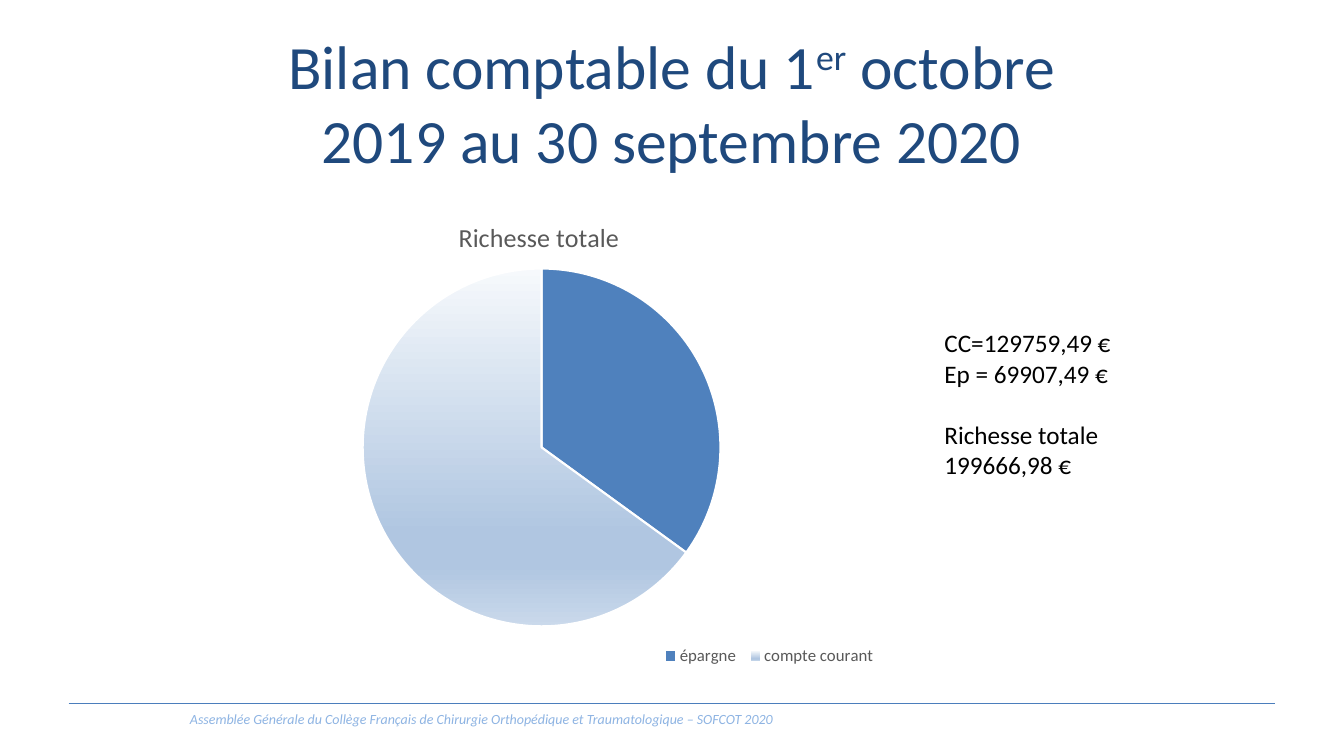
import pptx
import pptx.chart.data
import pptx.dml.color
import pptx.enum.chart
import pptx.enum.shapes
import pptx.enum.text
import pptx.oxml
import pptx.oxml.ns
import pptx.util

Cm, Pt = pptx.util.Cm, pptx.util.Pt
RGBColor = pptx.dml.color.RGBColor
qn = pptx.oxml.ns.qn
CENTER = pptx.enum.text.PP_ALIGN.CENTER

NAVY = RGBColor(0x1F, 0x49, 0x7D)
BLUE = RGBColor(0x4F, 0x81, 0xBD)
LINE_BLUE = RGBColor(0x4B, 0x7E, 0xBC)
PALE_BLUE = RGBColor(0x8E, 0xB4, 0xE3)
GREY = RGBColor(0x59, 0x59, 0x59)
BLACK = RGBColor(0, 0, 0)
WHITE = RGBColor(0xFF, 0xFF, 0xFF)
GRADIENT = [(0, "F6F9FC"), (74, "B0C6E1"), (83, "B0C6E1"), (100, "CAD9EB")]


def xml(tag, content):
    return pptx.oxml.parse_xml(
        f"<{tag} {pptx.oxml.ns.nsdecls('a', 'c')}>{content}</{tag}>")


def set_layout(parent, inner=False, **fractions):
    """Place a chart part by fractions of the chart's size."""
    for old in parent.findall(qn("c:layout")):
        parent.remove(old)
    target = '<c:layoutTarget val="inner"/>' if inner else ""
    modes = '<c:xMode val="edge"/><c:yMode val="edge"/>'
    sizes = "".join(f'<c:{k} val="{v}"/>' for k, v in fractions.items())
    layout = xml("c:layout", f"<c:manualLayout>{target}{modes}{sizes}</c:manualLayout>")
    overlay = parent.find(qn("c:overlay"))
    if overlay is None:
        parent.insert(0, layout)
    else:
        overlay.addprevious(layout)


class Deck:
    font_name = "Calibri"

    def __init__(self):
        self.prs = pptx.Presentation()
        self.prs.slide_width, self.prs.slide_height = Cm(33.87), Cm(19.05)
        self.s = self.prs.slides.add_slide(self.prs.slide_layouts[5])

    def style(self, font, size, color, italic=False):
        font.name, font.size, font.italic = self.font_name, Pt(size), italic
        font.bold = False
        font.color.rgb = color

    def title(self, box, runs, size, color):
        sp = self.s.shapes.title
        sp.left, sp.top, sp.width, sp.height = map(Cm, box)
        tf = sp.text_frame
        tf.word_wrap = True
        tf.auto_size = pptx.enum.text.MSO_AUTO_SIZE.NONE
        tf.vertical_anchor = pptx.enum.text.MSO_ANCHOR.MIDDLE
        p = tf.paragraphs[0]
        p.alignment = CENTER
        self.style(p.font, size, color)
        for text, baseline in runs:
            r = p.add_run()
            r.text = text
            if baseline:
                r.font._element.set("baseline", str(baseline * 1000))

    def text(self, box, lines, size, color, align=None, italic=False):
        """Each line is its text and the space before it in points."""
        tf = self.s.shapes.add_textbox(*map(Cm, box)).text_frame
        tf.word_wrap = True
        for i, (line, space) in enumerate(lines):
            p = tf.add_paragraph() if i else tf.paragraphs[0]
            p.text = line
            p.alignment = align
            if space:
                p.space_before = Pt(space)
            self.style(p.font, size, color, italic)

    def line(self, x1, y1, x2, y2, color, width):
        cn = self.s.shapes.add_connector(
            pptx.enum.shapes.MSO_CONNECTOR.STRAIGHT, Cm(x1), Cm(y1), Cm(x2), Cm(y2))
        cn.line.color.rgb, cn.line.width = color, Pt(width)
        cn._element.spPr.append(xml("a:effectLst", ""))

    def pie(self, box, title, values):
        data = pptx.chart.data.CategoryChartData()
        data.categories = list(values)
        data.add_series("Series 1", list(values.values()))
        chart = self.s.shapes.add_chart(
            pptx.enum.chart.XL_CHART_TYPE.PIE, *map(Cm, box), data).chart
        self.style(chart.font, 10, BLACK)

        # Chart title
        chart.has_title = True
        p = chart.chart_title.text_frame.paragraphs[0]
        p.text = title
        self.style(p.font, 18.6, GREY)
        set_layout(chart.chart_title._element, x=0.38, y=0.05)

        # Legend
        chart.has_legend = True
        legend = chart.legend
        legend.position = pptx.enum.chart.XL_LEGEND_POSITION.BOTTOM
        legend.include_in_layout = False
        self.style(legend.font, 12, GREY)
        set_layout(legend._element, x=0.67, y=0.93, w=0.32, h=0.06)

        # Slices
        plot = chart.plots[0]
        plot.vary_by_categories = True
        set_layout(chart._chartSpace.chart.plotArea, inner=True,
                   x=0.25, y=0.16, w=0.51, h=0.74)
        savings, current = (plot.series[0].points[i].format for i in range(2))
        savings.fill.solid()
        savings.fill.fore_color.rgb = BLUE
        current.fill.gradient()
        current.fill.gradient_angle = 270
        stops = chart._chartSpace.find(".//" + qn("a:gsLst"))
        stops[:] = [xml("a:gs", f'<a:srgbClr val="{color}"/>') for _, color in GRADIENT]
        for stop, (position, _) in zip(stops, GRADIENT):
            stop.set("pos", str(position * 1000))
        for piece in (savings, current):
            piece.line.color.rgb, piece.line.width = WHITE, Pt(1.5)


def main():
    deck = Deck()

    # Footer
    deck.line(1.73, 17.73, 32.13, 17.73, LINE_BLUE, 0.75)
    deck.text((1.73, 17.78, 20.8, 0.69),
              [("Assemblée Générale du Collège Français de Chirurgie "
                "Orthopédique et Traumatologique – SOFCOT 2020", 0)],
              10, PALE_BLUE, CENTER, italic=True)

    # Title
    deck.title((6.73, 0.56, 20.4, 4.01),
               [("Bilan comptable du 1", 0), ("er", 30),
                (" octobre 2019 au 30 septembre 2020", 0)], 44, NAVY)

    # Total wealth: chart and amounts
    deck.pie((4.72, 4.8, 17.68, 12.22), "Richesse totale",
             {"épargne": 35, "compte courant": 65})
    deck.text((23.55, 8.13, 5.21, 4.11),
              [("CC=129759,49 €", 0), ("Ep = 69907,49 €", 0),
               ("Richesse totale", 22), ("199666,98 €", 0)], 18, BLACK)

    deck.prs.save("out.pptx")


if __name__ == "__main__":
    main()
